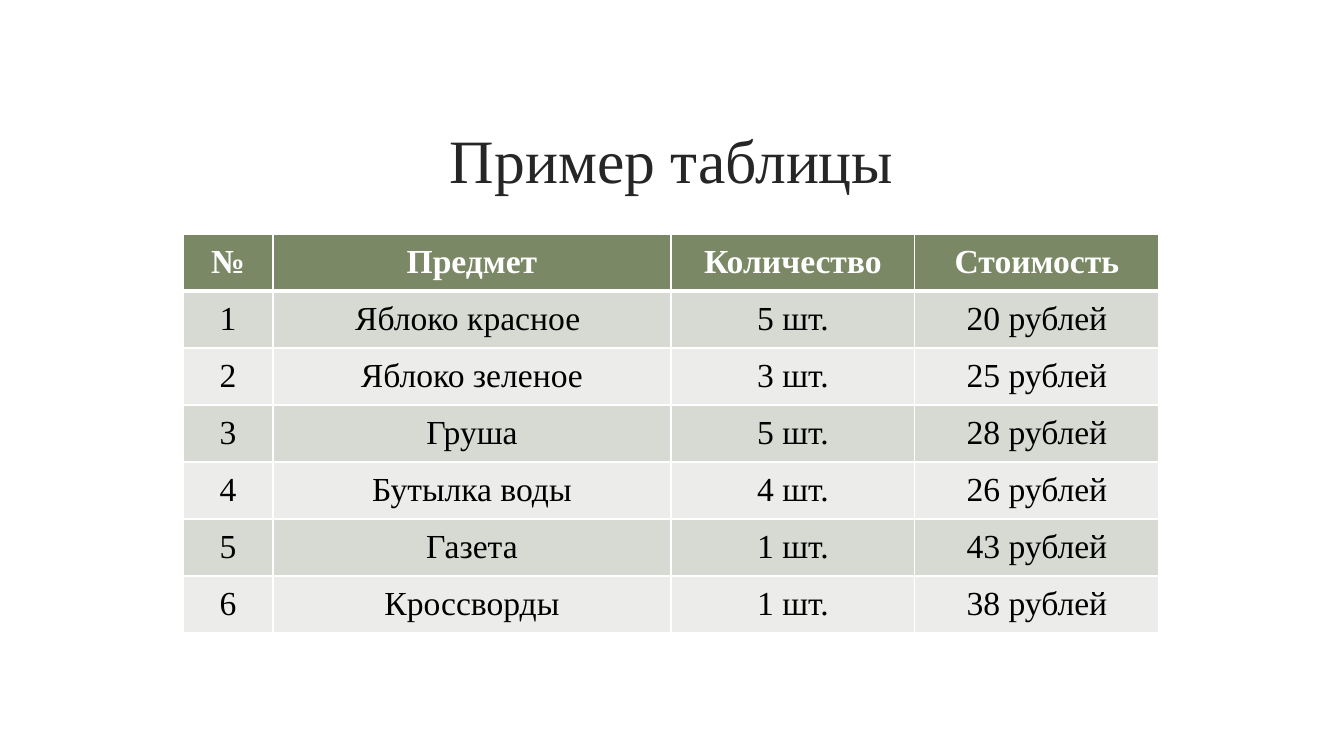
import pptx
import pptx.dml.color
import pptx.enum.text
import pptx.util
from lxml import etree
from pptx.oxml.ns import qn

PX = 914400 / 100.8
FONT = "Times New Roman"
WHITE = "FFFFFF"
HEADER_FILL = "7B8865"
BAND_FILLS = ["ECEDEA", "D7DAD3"]
COLUMN_WIDTHS = [90, 398, 244, 244]
ROW_HEIGHT = 57
ROWS = [
    ["№", "Предмет", "Количество", "Стоимость"],
    ["1", "Яблоко красное ", "5 шт.", "20 рублей"],
    ["2", "Яблоко зеленое", "3 шт.", "25 рублей"],
    ["3", "Груша", "5 шт.", "28 рублей"],
    ["4", "Бутылка воды", "4 шт.", "26 рублей"],
    ["5", "Газета", "1 шт.", "43 рублей"],
    ["6", "Кроссворды", "1 шт.", "38 рублей"],
]


def px(*lengths):
    return [pptx.util.Emu(round(length * PX)) for length in lengths]


def add_text(text_frame, text, size, color, bold=False):
    """Add one centred run to the first paragraph."""
    paragraph = text_frame.paragraphs[0]
    paragraph.alignment = pptx.enum.text.PP_ALIGN.CENTER
    run = paragraph.add_run()
    run.text = text
    run.font.name = FONT
    run.font.size = pptx.util.Pt(size)
    run.font.bold = bold
    run.font.color.rgb = pptx.dml.color.RGBColor.from_string(color)


presentation = pptx.Presentation()
presentation.slide_width, presentation.slide_height = px(1344, 756)
slide = presentation.slides.add_slide(presentation.slide_layouts[5])

title = slide.shapes.title
title.left, title.top, title.width, title.height = px(143, 108, 1058, 101)
title.text_frame.vertical_anchor = pptx.enum.text.MSO_ANCHOR.MIDDLE
add_text(title.text_frame, "Пример таблицы", 44, "262626")

table = slide.shapes.add_table(
    len(ROWS), len(COLUMN_WIDTHS),
    *px(183, 234, sum(COLUMN_WIDTHS), ROW_HEIGHT * len(ROWS)),
).table
for column, width in zip(table.columns, px(*COLUMN_WIDTHS)):
    column.width = width

for row_index, row_texts in enumerate(ROWS):
    table.rows[row_index].height = px(ROW_HEIGHT)[0]
    is_header = row_index == 0
    fill = HEADER_FILL if is_header else BAND_FILLS[row_index % 2]
    border_points = {
        "a:lnL": 1,
        "a:lnR": 1,
        "a:lnT": 3 if row_index == 1 else 1,
        "a:lnB": 3 if is_header else 1,
    }
    for column_index, text in enumerate(row_texts):
        cell = table.cell(row_index, column_index)
        cell.vertical_anchor = pptx.enum.text.MSO_ANCHOR.MIDDLE
        properties = cell._tc.get_or_add_tcPr()
        for tag, points in border_points.items():
            border = etree.SubElement(properties, qn(tag), w=str(pptx.util.Pt(points)))
            border_fill = etree.SubElement(border, qn("a:solidFill"))
            etree.SubElement(border_fill, qn("a:srgbClr"), val=WHITE)
        cell.fill.solid()
        cell.fill.fore_color.rgb = pptx.dml.color.RGBColor.from_string(fill)
        add_text(cell.text_frame, text, 24, WHITE if is_header else "000000", is_header)

presentation.save("out.pptx")
